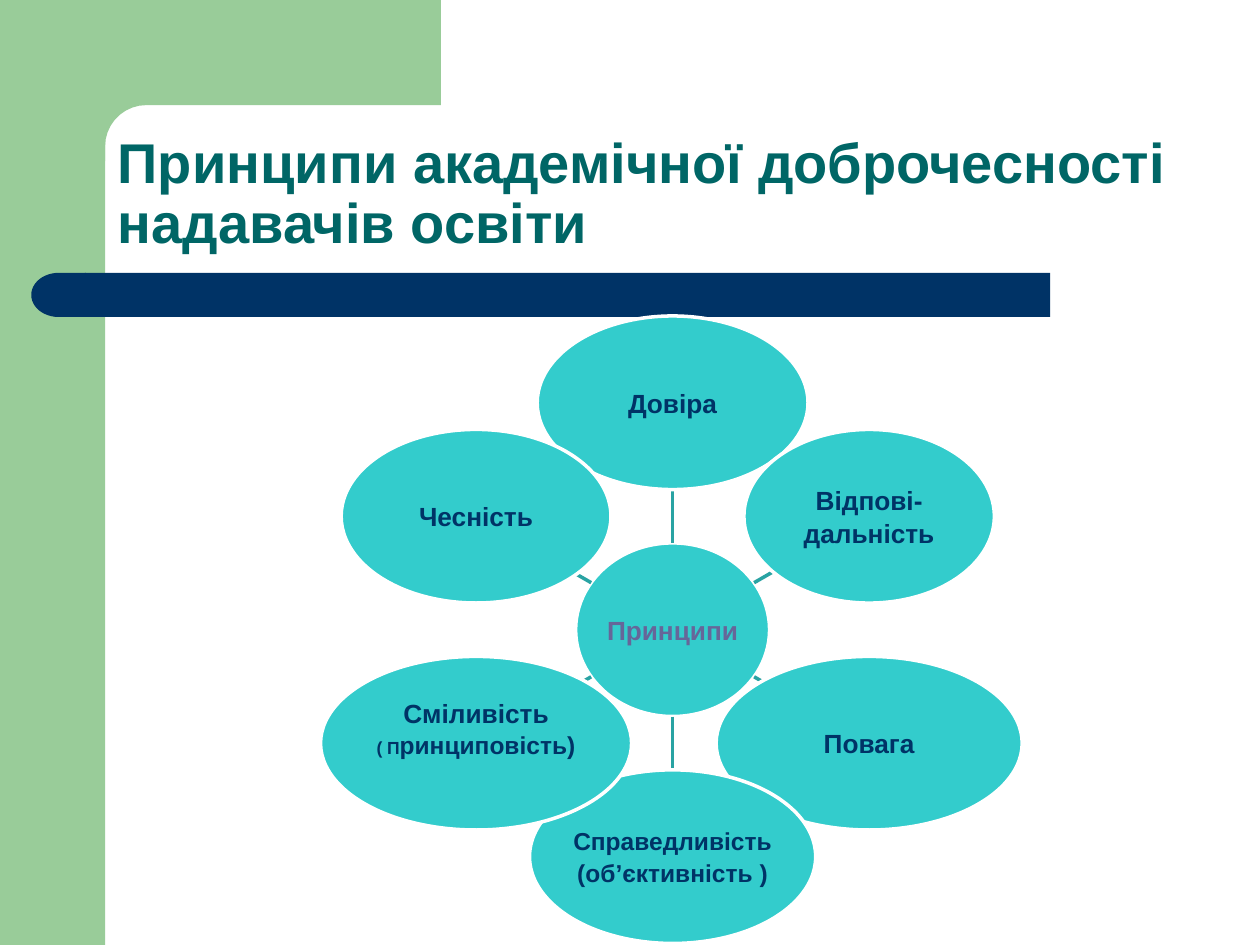
import math

import pptx
import pptx.dml.color
import pptx.enum.shapes
import pptx.enum.text
import pptx.oxml
import pptx.oxml.ns
import pptx.util

Cm = pptx.util.Cm
Pt = pptx.util.Pt
RGBColor = pptx.dml.color.RGBColor
SHAPE = pptx.enum.shapes.MSO_SHAPE
ANCHOR = pptx.enum.text.MSO_ANCHOR
ALIGN = pptx.enum.text.PP_ALIGN

GREEN = RGBColor(0x99, 0xCC, 0x99)
NAVY = RGBColor(0x00, 0x33, 0x66)
TEAL = RGBColor(0x00, 0x66, 0x66)
TURQUOISE = RGBColor(0x33, 0xCC, 0xCC)
SPOKE_TEAL = RGBColor(0x29, 0xA3, 0xA3)
VIOLET = RGBColor(0x66, 0x66, 0x99)
WHITE = RGBColor(0xFF, 0xFF, 0xFF)

FONT = "Arial"
OVAL_HEIGHT = 3.5
HUB_WIDTH = 3.91

# Clockwise from the top: width in cm, bottom inset in cm,
# and lines made of (text, size) runs.
PRINCIPLES = [
    (5.46, 0, [[("Довіра", 15)]]),
    (5.05, 0, [[("Відпові-", 15)], [("дальність", 15)]]),
    (6.17, 0, [[("Повага", 15)]]),
    (5.77, 0, [[("Справедливість", 14)], [("(об’єктивність )", 14)]]),
    (6.27, 0.6, [[("Сміливість", 15)], [("( П", 10), ("ринциповість)", 14)]]),
    (5.44, 0, [[("Чесність", 15)]]),
]


def style_run(run, size, color):
    run.font.name = FONT
    run.font.size = Pt(size)
    run.font.bold = True
    run.font.color.rgb = color


def fill_plain(shape, color):
    shape.shadow.inherit = False
    shape.fill.solid()
    shape.fill.fore_color.rgb = color
    shape.line.fill.background()


def add_plain(slide, kind, left, top, width, height, color):
    shape = slide.shapes.add_shape(kind, Cm(left), Cm(top), Cm(width), Cm(height))
    fill_plain(shape, color)
    return shape


def add_green_frame(slide, left, top, width, height):
    """Left band and top block, joined by a rounded inner corner."""
    band, block, radius = 2.12, 2.12, 0.83
    add_plain(slide, SHAPE.RECTANGLE, left, top, band, height, GREEN)
    inner_x, inner_y = left + band, top + block
    angles = [math.radians(degrees) for degrees in range(0, 91, 10)]
    corner = [(inner_x + radius * (1 - math.sin(angle)),
               inner_y + radius * (1 - math.cos(angle))) for angle in angles]
    outline = [(left + width, top), (left + width, inner_y), *corner,
               (inner_x, inner_y + 1.13), (left + 1.27, inner_y + 1.13),
               (left + 1.27, top)]
    points = [(Cm(x), Cm(y)) for x, y in outline]
    builder = slide.shapes.build_freeform(*points[0])
    builder.add_line_segments(points[1:], close=True)
    fill_plain(builder.convert_to_shape(), GREEN)


def add_title_bar(slide, left, top, width, height):
    """Navy bar with a rounded left end."""
    cap = 1.08
    add_plain(slide, SHAPE.RECTANGLE, left + cap, top, width - cap, height, NAVY)
    end = add_plain(slide, SHAPE.FLOWCHART_DELAY, left, top, cap + 0.02, height, NAVY)
    end.rotation = 180


def set_title(slide, left, top, width, height):
    title = slide.shapes.title
    title.left, title.top = Cm(left), Cm(top)
    title.width, title.height = Cm(width), Cm(height)
    frame = title.text_frame
    frame.text = "Принципи академічної доброчесності надавачів освіти"
    frame.word_wrap = True
    frame.auto_size = pptx.enum.text.MSO_AUTO_SIZE.NONE
    frame.vertical_anchor = ANCHOR.BOTTOM
    paragraph = frame.paragraphs[0]
    paragraph.alignment = ALIGN.LEFT
    paragraph.line_spacing = 0.9
    style_run(paragraph.runs[0], 32, TEAL)


def add_oval(slide, center_x, center_y, width, lines, color, bottom_inset=0):
    oval = add_plain(slide, SHAPE.OVAL, center_x - width / 2,
                     center_y - OVAL_HEIGHT / 2, width, OVAL_HEIGHT, TURQUOISE)
    oval.line.color.rgb = WHITE
    oval.line.width = Pt(2)
    frame = oval.text_frame
    frame.word_wrap = False
    frame.vertical_anchor = ANCHOR.MIDDLE
    frame.margin_left = frame.margin_right = frame.margin_top = 0
    frame.margin_bottom = Cm(bottom_inset)
    for index, line in enumerate(lines):
        paragraph = frame.add_paragraph() if index else frame.paragraphs[0]
        paragraph.alignment = ALIGN.CENTER
        paragraph.space_before = Pt(1 if index else 0)
        for text, size in line:
            run = paragraph.add_run()
            run.text = text
            style_run(run, size, color)


def oval_reach(width, angle):
    """Distance from an oval's centre to its edge in the given direction."""
    return 1 / math.hypot(math.cos(angle) / (width / 2),
                          math.sin(angle) / (OVAL_HEIGHT / 2))


def add_spoke(slide, center_x, center_y, angle, start, end):
    ends = [Cm(center + distance * direction)
            for distance in (start, end)
            for center, direction in ((center_x, math.cos(angle)),
                                      (center_y, math.sin(angle)))]
    spoke = slide.shapes.add_connector(
        pptx.enum.shapes.MSO_CONNECTOR.STRAIGHT, *ends)
    spoke.line.color.rgb = SPOKE_TEAL
    spoke.line.width = Pt(2)
    properties = spoke._element.spPr
    properties.append(properties.makeelement(pptx.oxml.ns.qn("a:effectLst"), {}))


def add_principles_wheel(slide, left, top, width, height):
    center_x, center_y = left + width / 2, top + height / 2
    radius = (height - OVAL_HEIGHT) / 2
    add_oval(slide, center_x, center_y, HUB_WIDTH, [[("Принципи", 15)]], VIOLET)
    for index, (oval_width, inset, lines) in enumerate(PRINCIPLES):
        angle = math.tau * index / len(PRINCIPLES) - math.pi / 2
        add_spoke(slide, center_x, center_y, angle, oval_reach(HUB_WIDTH, angle),
                  radius - oval_reach(oval_width, angle))
        add_oval(slide, center_x + radius * math.cos(angle),
                 center_y + radius * math.sin(angle),
                 oval_width, lines, NAVY, inset)


def main():
    presentation = pptx.Presentation()
    presentation.slide_width, presentation.slide_height = Cm(25.4), Cm(19.05)
    slide = presentation.slides.add_slide(presentation.slide_layouts[5])
    add_green_frame(slide, 0, 0, 8.89, 19.05)
    add_title_bar(slide, 0.63, 5.5, 20.54, 0.89)
    set_title(slide, 2.12, 2.12, 22.01, 3.17)
    add_principles_wheel(slide, 6.46, 6.37, 14.2, 12.65)
    presentation.save("out.pptx")


if __name__ == "__main__":
    main()
